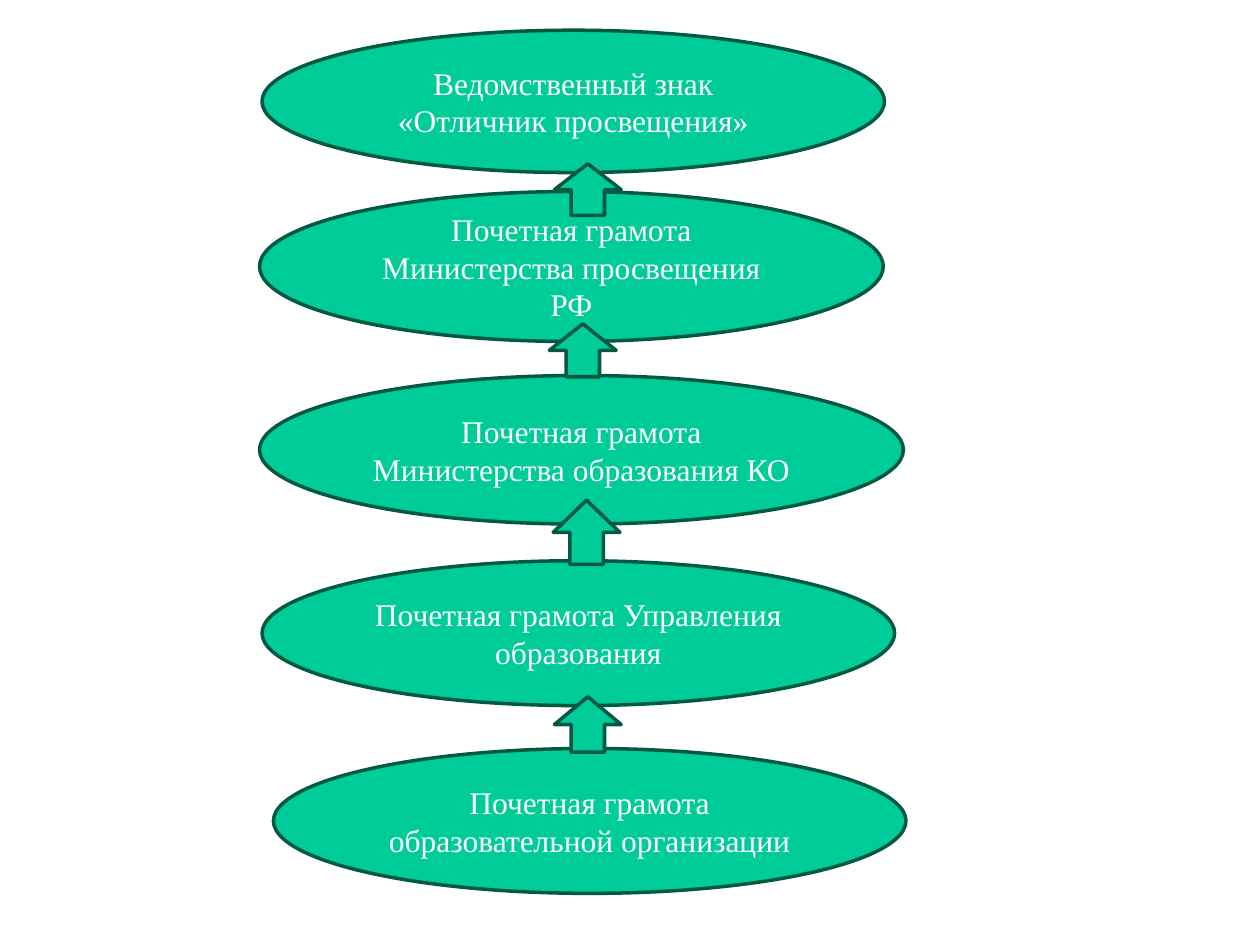
from pptx import Presentation
from pptx.dml.color import RGBColor
from pptx.enum.shapes import MSO_SHAPE
from pptx.enum.text import MSO_ANCHOR, PP_ALIGN
from pptx.util import Inches, Pt

OVAL = MSO_SHAPE.OVAL
ARROW = MSO_SHAPE.DOWN_ARROW
MIDDLE = MSO_ANCHOR.MIDDLE
CENTER = PP_ALIGN.CENTER

FONT = "Times New Roman"
COLORS = {"fill": "00CC99", "line": "005943", "text": "FFFFFF"}

# Awards from lowest to highest: text, left, top, width, height
AWARDS = [
    ("Почетная грамота образовательной организации", 2.17, 5.94, 5.02, 1.15),
    ("Почетная грамота Управления образования", 2.08, 4.45, 5.02, 1.15),
    ("Почетная грамота Министерства образования КО", 2.06, 2.98, 5.11, 1.18),
    ("Почетная грамота Министерства просвещения РФ", 2.06, 1.52, 4.95, 1.19),
    ("Ведомственный знак «Отличник просвещения»", 2.08, 0.24, 4.94, 1.13),
]

# Steps between awards, from the top: left, top, height
STEPS = [
    (4.4, 1.3, 0.41),
    (4.36, 2.57, 0.42),
    (4.39, 3.97, 0.51),
    (4.4, 5.53, 0.44),
]
STEP_WIDTH = 0.53


def color(name):
    return RGBColor.from_string(COLORS[name])


def add_shape(slide, kind, *box):
    """Add a filled, outlined shape; box is left, top, width, height in inches."""
    shape = slide.shapes.add_shape(kind, *map(Inches, box))
    shape.shadow.inherit = False
    shape.fill.solid()
    shape.fill.fore_color.rgb = color("fill")
    shape.line.color.rgb = color("line")
    shape.line.width = Pt(2)
    return shape


def add_award(slide, text, *box):
    frame = add_shape(slide, OVAL, *box).text_frame
    frame.word_wrap = True
    frame.vertical_anchor = MIDDLE
    frame.text = text
    para = frame.paragraphs[0]
    para.alignment = CENTER
    font = para.runs[0].font
    font.name = FONT
    font.size = Pt(18)
    font.color.rgb = color("text")


def add_step(slide, left, top, height):
    """Add an arrow that points up to the next award."""
    arrow = add_shape(slide, ARROW, left, top, STEP_WIDTH, height)
    arrow.rotation = 180


def main():
    prs = Presentation()
    prs.slide_width = Inches(10)
    prs.slide_height = Inches(7.5)
    slide = prs.slides.add_slide(prs.slide_layouts[6])
    for award in AWARDS:
        add_award(slide, *award)
    for step in STEPS:
        add_step(slide, *step)
    prs.save("out.pptx")


if __name__ == "__main__":
    main()
